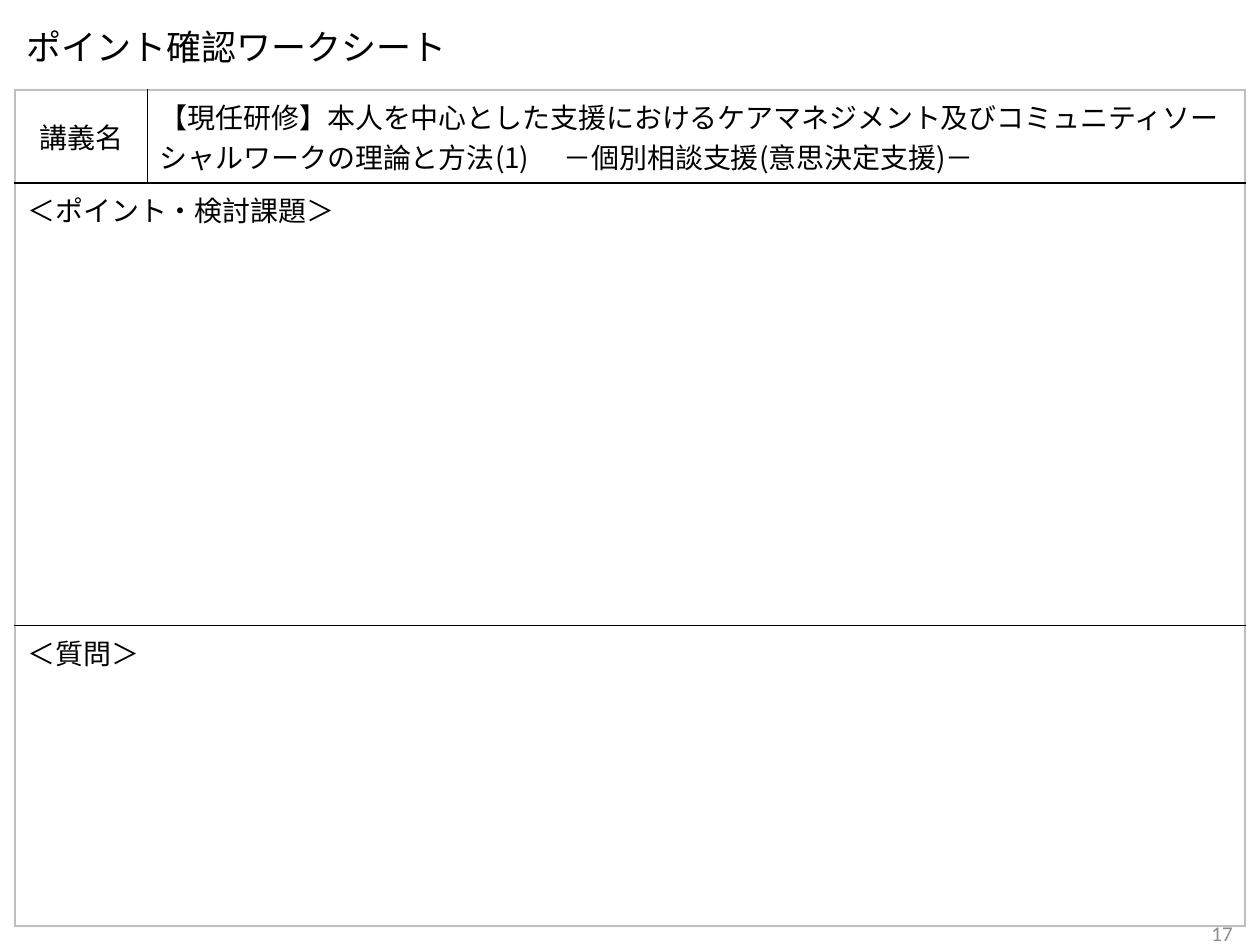
import pptx
import pptx.util
import pptx.dml.color
import pptx.enum.text
import pptx.oxml.ns
from lxml import etree

Cm = pptx.util.Cm
Pt = pptx.util.Pt
ANCHOR = pptx.enum.text.MSO_ANCHOR
ALIGN = pptx.enum.text.PP_ALIGN
qn = pptx.oxml.ns.qn

COLORS = {"paper": "FFFFFF", "ink": "000000", "frame": "BFBFBF", "number": "8C8C8C"}
JAPANESE = "Noto Sans CJK JP"
COLUMN_WIDTHS = [Cm(2.67), Cm(22.12)]
ROW_HEIGHTS = [Cm(1.88), Cm(8.92), Cm(6.05)]

# Border styles: colour name and width in points
FRAME = ("frame", 1.25)
RULE = ("ink", 1)
HEADER_RULE = ("ink", 1.25)


def write_text(text_frame, text, size, font=JAPANESE, color="ink", align=ALIGN.LEFT):
    paragraph = text_frame.paragraphs[0]
    paragraph.alignment = align
    run = paragraph.add_run()
    run.text = text
    run.font.size = Pt(size)
    run.font.name = font
    run.font.color.rgb = pptx.dml.color.RGBColor.from_string(COLORS[color])
    east_asian = etree.SubElement(run.font._element, qn("a:ea"))
    east_asian.set("typeface", font)
    return paragraph


def add_label(slide, left, top, width, height, text, size, **style):
    shape = slide.shapes.add_textbox(left, top, width, height)
    shape.text_frame.word_wrap = True
    shape.text_frame.vertical_anchor = ANCHOR.MIDDLE
    return write_text(shape.text_frame, text, size, **style)


def set_border(cell, side, border):
    color, width = border
    line = etree.SubElement(cell._tc.get_or_add_tcPr(), qn(f"a:ln{side}"))
    line.set("w", str(Pt(width)))
    fill = etree.SubElement(line, qn("a:solidFill"))
    etree.SubElement(fill, qn("a:srgbClr")).set("val", COLORS[color])


def format_cell(cell, row, column):
    horizontal = [FRAME, HEADER_RULE, RULE, FRAME]
    # Only the first row is divided; merged rows have the frame on both sides
    vertical = [FRAME, RULE if row == 0 else FRAME, FRAME]
    sides = {"L": vertical[column], "R": vertical[column + 1],
             "T": horizontal[row], "B": horizontal[row + 1]}
    for side, border in sides.items():
        set_border(cell, side, border)
    cell.fill.solid()
    cell.fill.fore_color.rgb = pptx.dml.color.RGBColor.from_string(COLORS["paper"])


def add_worksheet(slide, left, top):
    table = slide.shapes.add_table(
        len(ROW_HEIGHTS), len(COLUMN_WIDTHS), left, top,
        sum(COLUMN_WIDTHS), sum(ROW_HEIGHTS)).table
    table.first_row = False
    table.horz_banding = False
    for column, width in zip(table.columns, COLUMN_WIDTHS):
        column.width = width
    for row, height in zip(table.rows, ROW_HEIGHTS):
        row.height = height
    for row in range(len(ROW_HEIGHTS)):
        for column in range(len(COLUMN_WIDTHS)):
            format_cell(table.cell(row, column), row, column)

    # Lecture name
    heading = table.cell(0, 0)
    heading.vertical_anchor = ANCHOR.MIDDLE
    write_text(heading.text_frame, "講義名", 16, align=ALIGN.CENTER)
    write_text(table.cell(0, 1).text_frame,
               "【現任研修】本人を中心とした支援におけるケアマネジメント及び"
               "コミュニティソーシャルワークの理論と方法(1) 　"
               "－個別相談支援(意思決定支援)－", 16)

    # Full-width writing areas
    for row, text in enumerate(["＜ポイント・検討課題＞", "＜質問＞"], start=1):
        table.cell(row, 0).merge(table.cell(row, 1))
        write_text(table.cell(row, 0).text_frame, text, 16)


def main():
    presentation = pptx.Presentation()
    presentation.slide_width = Cm(25.4)
    presentation.slide_height = Cm(19.05)
    slide = presentation.slides.add_slide(presentation.slide_layouts[6])

    # Title
    title = add_label(slide, Cm(0.28), Cm(0.5), Cm(22.86), Cm(0.97),
                      "ポイント確認ワークシート", 20)
    title.line_spacing = 0.9

    # Page number
    add_label(slide, Cm(19.18), Cm(18.31), Cm(5.92), Cm(1.02), "17", 12,
              font="Calibri", color="number", align=ALIGN.RIGHT)

    # Worksheet
    add_worksheet(slide, Cm(0.3), Cm(1.81))
    presentation.save("out.pptx")


if __name__ == "__main__":
    main()
